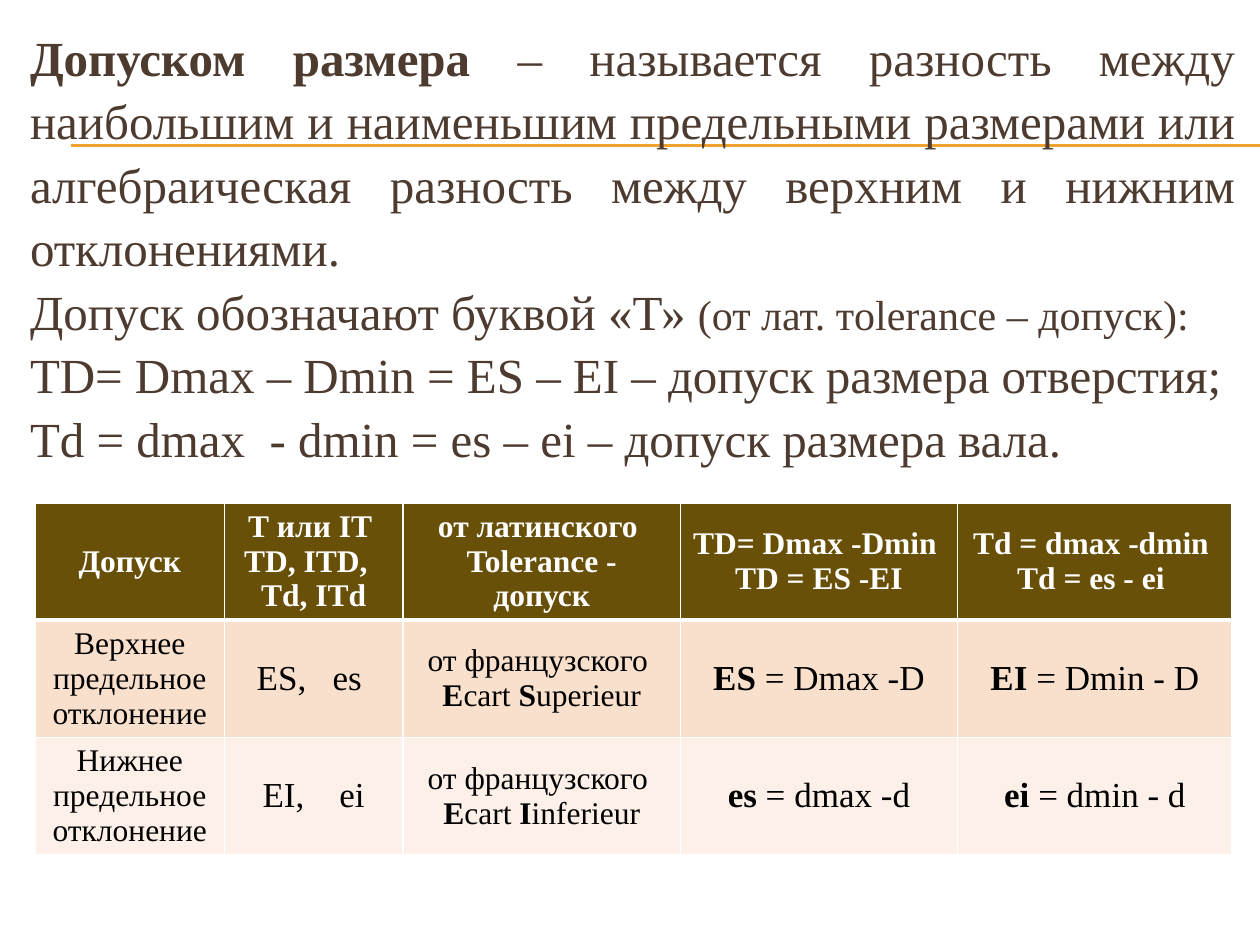
import pptx
import pptx.enum.shapes
import pptx.enum.text
import pptx.util
import pptx.dml.color
import pptx.oxml
import pptx.oxml.ns

Inches = pptx.util.Inches
Pt = pptx.util.Pt
PP_ALIGN = pptx.enum.text.PP_ALIGN

COLORS = {
    "text": "4E3B30",
    "rule": "F0A22E",
    "header": "695008",
    "upper": "F9E0CD",
    "lower": "FCF0E8",
    "white": "FFFFFF",
    "black": "000000",
}

DEFINITION = [
    [("Допуском размера ", 28, True),
     ("– называется разность между наибольшим и наименьшим предельными размерами "
      "или алгебраическая разность между верхним и нижним отклонениями.", 28, False)],
    [("Допуск обозначают буквой «Т» ", 28, False),
     ("(от лат. тolerance – допуск):", 24, False)],
    [("TD= Dmax – Dmin = ES – EI – допуск размера отверстия;", 28, False)],
    [("Td = dmax  - dmin = es – ei – допуск размера вала.", 28, False)],
]

HEADER = ["Допуск", "Т или IT \nTD, ITD,  \nTd, ITd",
          "от латинского \nTolerance - допуск",
          "TD= Dmax -Dmin \nTD = ES -EI",
          "Td = dmax -dmin \nTd = es - ei "]


def deviation_row(name, symbols, initial, rest, hole, shaft):
    """Return the cells of one deviation row as lists of runs."""
    return [
        [(name, 18, False)],
        [(symbols, 20, False)],
        [("от французского \n", 18, False), ("E", 18, True), ("cart ", 18, False),
         (initial, 18, True), (rest, 18, False)],
        [(hole[0], 20, True), (hole[1], 20, False)],
        [(shaft[0], 20, True), (shaft[1], 20, False)],
    ]


ROWS = [
    ("header", "white", [[(label, 18, True)] for label in HEADER]),
    ("upper", "black", deviation_row(
        "Верхнее предельное отклонение", "ES,   es ", "S", "uperieur",
        ("ES ", "= Dmax -D"), ("EI", " = Dmin - D"))),
    ("lower", "black", deviation_row(
        "Нижнее предельное отклонение", "EI,    ei", "I", "inferieur",
        ("es", " = dmax -d"), ("ei ", "= dmin - d"))),
]


class SlideBuilder:
    """Hold the text style and the current slide, and add elements to it."""

    def __init__(self, slide, font="Times New Roman"):
        self.slide = slide
        self.font = font

    def color(self, name):
        return pptx.dml.color.RGBColor.from_string(COLORS[name])

    def runs(self, p, runs, color, align):
        p.alignment = align
        for text, size, bold in runs:
            for i, line in enumerate(text.split("\n")):
                if i:
                    p.add_line_break()
                if line:
                    r = p.add_run()
                    r.text = line
                    r.font.name = self.font
                    r.font.size = Pt(size)
                    r.font.bold = bold
                    r.font.color.rgb = self.color(color)

    def rule(self, x1, x2, y):
        sp = self.slide.shapes.add_connector(
            pptx.enum.shapes.MSO_CONNECTOR.STRAIGHT,
            Inches(x1), Inches(y), Inches(x2), Inches(y))
        sp.line.color.rgb = self.color("rule")
        sp.line.width = Pt(0.75)
        sp._element.spPr.append(pptx.oxml.parse_xml(
            f'<a:effectLst {pptx.oxml.ns.nsdecls("a")}/>'))

    def text(self, x, y, w, h, paragraphs, color):
        sp = self.slide.shapes.add_textbox(Inches(x), Inches(y), Inches(w), Inches(h))
        tf = sp.text_frame
        tf.word_wrap = True
        for i, runs in enumerate(paragraphs):
            p = tf.add_paragraph() if i else tf.paragraphs[0]
            p.line_spacing = 1.08
            self.runs(p, runs, color, PP_ALIGN.JUSTIFY)

    def borders(self, cell, bottom):
        tc_pr = cell._tc.get_or_add_tcPr()
        for side, width in (("L", 1), ("R", 1), ("T", 1), ("B", bottom)):
            tc_pr.append(pptx.oxml.parse_xml(
                f'<a:ln{side} {pptx.oxml.ns.nsdecls("a")} w="{Pt(width)}"><a:solidFill>'
                f'<a:srgbClr val="{COLORS["white"]}"/></a:solidFill></a:ln{side}>'))

    def table(self, x, y, widths, row_height, rows):
        table = self.slide.shapes.add_table(
            len(rows), len(widths), Inches(x), Inches(y),
            Inches(sum(widths)), Inches(row_height * len(rows))).table
        for column, width in zip(table.columns, widths):
            column.width = Inches(width)
        for i, (fill, color, cells) in enumerate(rows):
            for j, runs in enumerate(cells):
                cell = table.cell(i, j)
                self.borders(cell, 1 if i else 3)
                cell.fill.solid()
                cell.fill.fore_color.rgb = self.color(fill)
                cell.vertical_anchor = pptx.enum.text.MSO_ANCHOR.MIDDLE
                self.runs(cell.text_frame.paragraphs[0], runs, color, PP_ALIGN.CENTER)


def main():
    prs = pptx.Presentation()
    prs.slide_width, prs.slide_height = Inches(10), Inches(7.5)
    s = SlideBuilder(prs.slides.add_slide(prs.slide_layouts[6]))
    for y in (1.15, 1.16):
        s.rule(0.56, 10, y)
    s.table(0.28, 3.99, [1.5, 1.42, 2.2, 2.2, 2.18], 0.93, ROWS)
    s.text(0.14, 0.13, 9.76, 3.87, DEFINITION, "text")
    prs.save("out.pptx")


if __name__ == "__main__":
    main()
